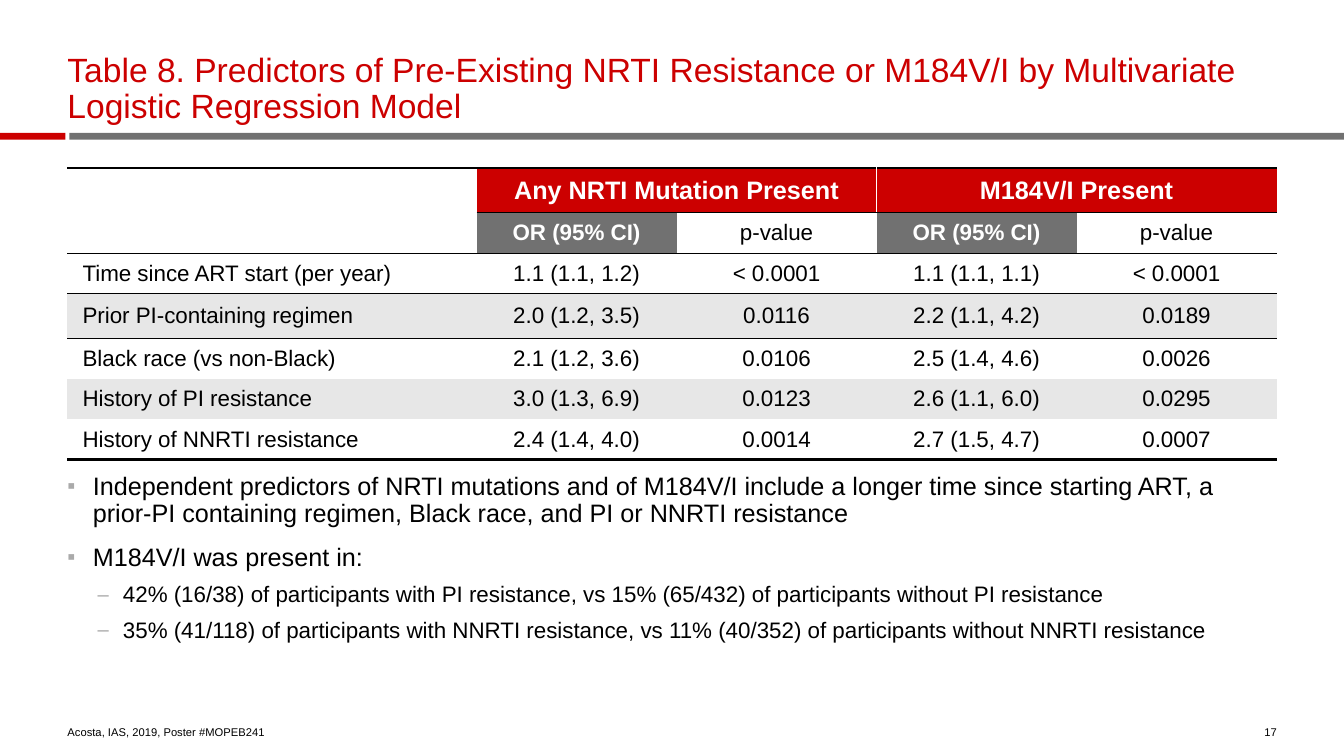
from lxml import etree
from pptx import Presentation
from pptx.dml.color import RGBColor
from pptx.enum.shapes import MSO_SHAPE
from pptx.enum.text import MSO_ANCHOR, PP_ALIGN
from pptx.oxml.ns import qn
from pptx.util import Cm, Pt

RECTANGLE = MSO_SHAPE.RECTANGLE
TOP, MIDDLE, BOTTOM = MSO_ANCHOR.TOP, MSO_ANCHOR.MIDDLE, MSO_ANCHOR.BOTTOM
LEFT, CENTER, RIGHT = PP_ALIGN.LEFT, PP_ALIGN.CENTER, PP_ALIGN.RIGHT
RED = RGBColor(0xCC, 0x00, 0x00)
GRAY = RGBColor(0x71, 0x71, 0x71)
BAND = RGBColor(0xE7, 0xE7, 0xE7)
BULLET = RGBColor(0xAA, 0xAA, 0xAA)
BLACK = RGBColor(0x00, 0x00, 0x00)
WHITE = RGBColor(0xFF, 0xFF, 0xFF)
NO_STYLE_NO_GRID = "{2D5ABB26-0587-4C30-8999-92F81FD0307C}"
MARGIN = Cm(1.7)


def write(para, text, size, color, bold=False, **layout):
    """Put one formatted span in a paragraph."""
    span = para.add_run()
    span.text = text
    for name, value in {"name": "Arial", "size": Pt(size), "bold": bold}.items():
        setattr(span.font, name, value)
    span.font.color.rgb = color
    for name, value in layout.items():
        setattr(para, name, value)


def add_box(left, top, width, height, anchor):
    """Add a wrapping text box without insets and return its frame."""
    frame = page.shapes.add_textbox(left, top, width, height).text_frame
    box_format = {"word_wrap": True, "vertical_anchor": anchor, "margin_left": 0,
                  "margin_top": 0, "margin_right": 0, "margin_bottom": 0}
    for name, value in box_format.items():
        setattr(frame, name, value)
    return frame


deck = Presentation()
deck.slide_width, deck.slide_height = Cm(33.87), Cm(19.05)
page = deck.slides.add_slide(deck.slide_layouts[6])

# Rule under the title
for left, width, color in [(1.75, 32.12, GRAY), (0, 1.65, RED)]:
    bar = page.shapes.add_shape(RECTANGLE, Cm(left), Cm(3.35), Cm(width), Cm(0.17))
    bar.shadow.inherit = False
    bar.fill.solid()
    bar.fill.fore_color.rgb = color
    bar.line.fill.background()

# Title
title = add_box(MARGIN, Cm(1.3), Cm(30.48), Cm(1.88), BOTTOM)
write(title.paragraphs[0],
      "Table 8. Predictors of Pre-Existing NRTI Resistance or M184V/I "
      "by Multivariate Logistic Regression Model", 24, RED, line_spacing=0.9)

# Findings
findings = [
    (0, "Independent predictors of NRTI mutations and of M184V/I include a longer "
        "time since starting ART, a prior-PI containing regimen, Black race, "
        "and PI or NNRTI resistance"),
    (0, "M184V/I was present in:"),
    (1, "42% (16/38) of participants with PI resistance, "
        "vs 15% (65/432) of participants without PI resistance"),
    (1, "35% (41/118) of participants with NNRTI resistance, "
        "vs 11% (40/352) of participants without NNRTI resistance"),
]
levels = [(18, 12, 0.64, "▪"), (16, 8, 1.4, "–")]
body = add_box(MARGIN, Cm(11.94), Cm(30.48), Cm(5.84), TOP)
for index, (level, text) in enumerate(findings):
    size, space, indent, mark = levels[level]
    para = body.add_paragraph() if index else body.paragraphs[0]
    write(para, text, size, BLACK, level=level, line_spacing=0.9,
          space_before=Pt(space))
    properties = para._p.get_or_add_pPr()
    properties.set("marL", str(Cm(indent)))
    properties.set("indent", str(-Cm(0.64)))
    bullet_color = etree.SubElement(properties, qn("a:buClr"))
    etree.SubElement(bullet_color, qn("a:srgbClr"), val=str(BULLET))
    etree.SubElement(properties, qn("a:buSzPct"), val="90000")
    etree.SubElement(properties, qn("a:buFont"), typeface="Arial")
    etree.SubElement(properties, qn("a:buChar"), char=mark)

# Source and page number
for left, width, align, text in [
    (1.7, 11.28, LEFT, "Acosta, IAS, 2019, Poster #MOPEB241"),
    (31.27, 0.91, RIGHT, "17"),
]:
    footer = add_box(Cm(left), Cm(18.16), Cm(width), Cm(0.46), BOTTOM)
    write(footer.paragraphs[0], text, 8, BLACK, alignment=align)

# Table of predictors
rows = [
    ["", "Any NRTI Mutation Present", "", "M184V/I Present", ""],
    ["", "OR (95% CI)", "p-value", "OR (95% CI)", "p-value"],
    ["Time since ART start (per year)",
     "1.1 (1.1, 1.2)", "< 0.0001", "1.1 (1.1, 1.1)", "< 0.0001"],
    ["Prior PI-containing regimen",
     "2.0 (1.2, 3.5)", "0.0116", "2.2 (1.1, 4.2)", "0.0189"],
    ["Black race (vs non-Black)",
     "2.1 (1.2, 3.6)", "0.0106", "2.5 (1.4, 4.6)", "0.0026"],
    ["History of PI resistance",
     "3.0 (1.3, 6.9)", "0.0123", "2.6 (1.1, 6.0)", "0.0295"],
    ["History of NNRTI resistance",
     "2.4 (1.4, 4.0)", "0.0014", "2.7 (1.5, 4.7)", "0.0007"],
]
widths = [10.31] + [5.04] * 4
heights = [1.12, 1.02, 1.02, 1.12, 1.02, 1.02, 1.02]
rule_weights = {0: 2, 1: 1, 2: 1, 3: 1, 7: 2}  # horizontal rule above each row
frame = page.shapes.add_table(len(rows), len(widths), MARGIN, Cm(4.24),
                              Cm(sum(widths)), Cm(sum(heights)))
table = frame.table
table.first_row = table.horz_banding = False
next(frame._element.iter(qn("a:tableStyleId"))).text = NO_STYLE_NO_GRID
for column, width in zip(table.columns, widths):
    column.width = Cm(width)
for row, height in zip(table.rows, heights):
    row.height = Cm(height)
for first in (1, 3):
    table.cell(0, first).merge(table.cell(0, first + 1))

cell_format = {"vertical_anchor": MIDDLE, "margin_left": Cm(0.38),
               "margin_right": Cm(0.38), "margin_top": Cm(0.13),
               "margin_bottom": Cm(0.13)}
for r, texts in enumerate(rows):
    for c, text in enumerate(texts):
        cell = table.cell(r, c)
        for name, value in cell_format.items():
            setattr(cell, name, value)

        # Borders
        borders = {}
        if r == 0 and c == 3:
            borders["a:lnL"] = (WHITE, 1)
        if r == 0 and c in (1, 2):
            borders["a:lnR"] = (WHITE, 1)
        for side, rule in (("a:lnT", r), ("a:lnB", r + 1)):
            if rule in rule_weights and (rule, c) != (1, 0):
                borders[side] = (BLACK, rule_weights[rule])
        for side, (color, weight) in borders.items():
            line = etree.SubElement(cell._tc.get_or_add_tcPr(), qn(side),
                                    w=str(Pt(weight)))
            fill = etree.SubElement(line, qn("a:solidFill"))
            etree.SubElement(fill, qn("a:srgbClr"), val=str(color))

        # Fill and text
        is_header = c > 0 and (r == 0 or (r == 1 and c % 2 == 1))
        if is_header:
            fill_color = RED if r == 0 else GRAY
        else:
            fill_color = BAND if r in (3, 5) else WHITE
        cell.fill.solid()
        cell.fill.fore_color.rgb = fill_color
        if text:
            write(cell.text_frame.paragraphs[0], text, 18 if r == 0 else 16,
                  WHITE if is_header else BLACK, bold=is_header,
                  alignment=CENTER if c else LEFT)

deck.save("out.pptx")
